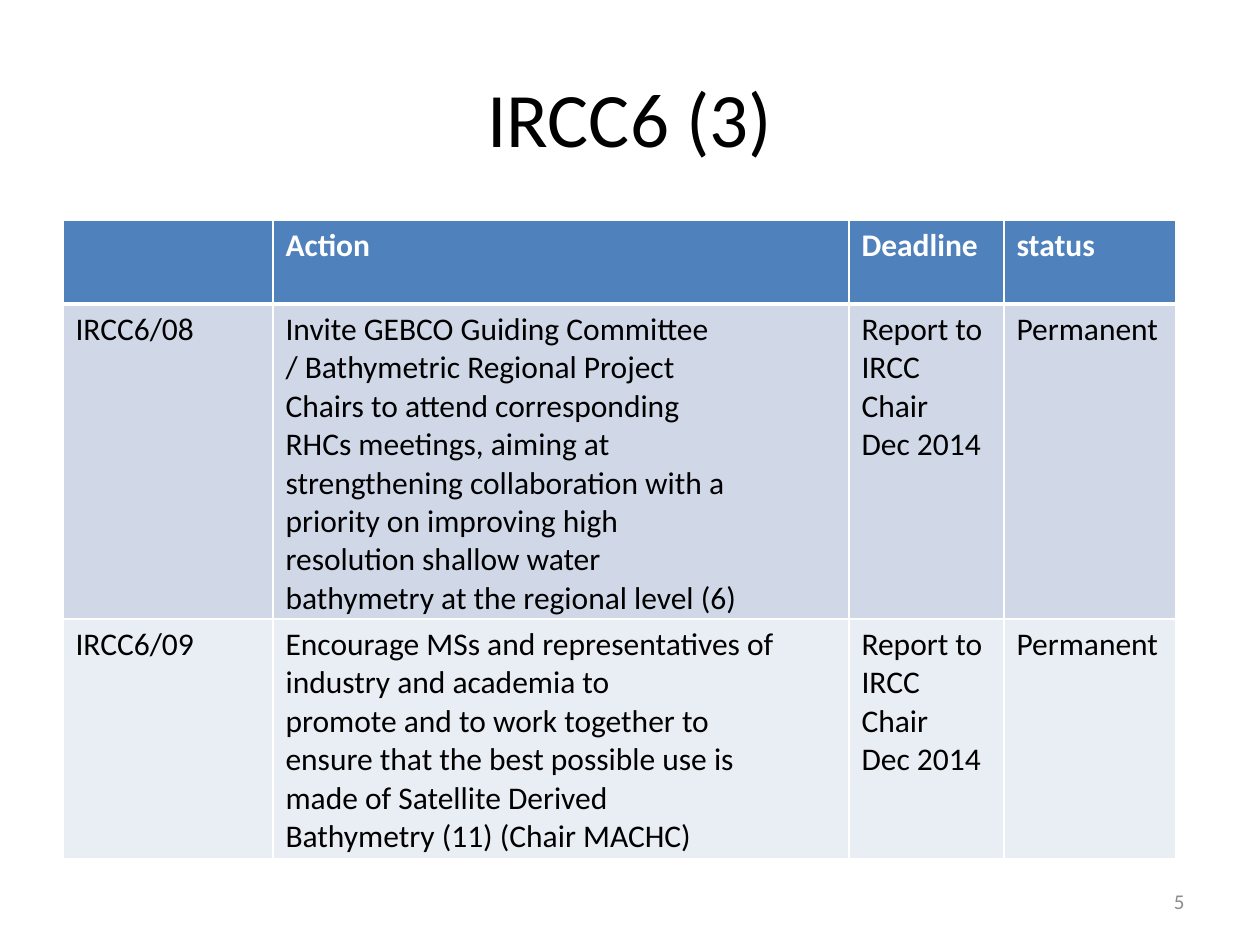
from dataclasses import dataclass

from lxml import etree
from pptx import Presentation
from pptx.dml.color import RGBColor
from pptx.enum.text import MSO_ANCHOR, PP_ALIGN
from pptx.oxml.ns import qn
from pptx.util import Emu, Pt

PX = 914400 // 126
MIDDLE = MSO_ANCHOR.MIDDLE
CENTER, LEFT, RIGHT = PP_ALIGN.CENTER, PP_ALIGN.LEFT, PP_ALIGN.RIGHT


@dataclass(frozen=True)
class Theme:
    font: str = "Calibri"
    title_size: int = 44
    table_size: int = 18
    number_size: int = 12
    black: str = "000000"
    white: str = "FFFFFF"
    grey: str = "8C8C8C"
    header_fill: str = "4F81BD"
    band_fills: tuple = ("D0D8E8", "E9EDF4")
    thin_border: int = 1
    thick_border: int = 3


THEME = Theme()

COLUMN_WIDTHS = (210, 576, 155, 172)
ROW_HEIGHTS = (84, 168, 168)
DEADLINE = "Report to\nIRCC Chair\nDec 2014"
ACTIONS = (
    ("", "Action", "Deadline", "status"),
    (
        "IRCC6/08",
        "Invite GEBCO Guiding Committee\n"
        "/ Bathymetric Regional Project\n"
        "Chairs to attend corresponding\n"
        "RHCs meetings, aiming at\n"
        "strengthening collaboration with a\n"
        "priority on improving high\n"
        "resolution shallow water\n"
        "bathymetry at the regional level (6)",
        DEADLINE,
        "Permanent",
    ),
    (
        "IRCC6/09",
        "Encourage MSs and representatives of industry and academia to\n"
        "promote and to work together to\n"
        "ensure that the best possible use is\n"
        "made of Satellite Derived\n"
        "Bathymetry (11) (Chair MACHC)",
        DEADLINE,
        "Permanent",
    ),
)


def px(length):
    return Emu(length * PX)


def write_text(text_frame, text, size, color, alignment=LEFT, bold=False):
    """Fill a text frame, one paragraph per line of text."""
    text_frame.text = text
    for paragraph in text_frame.paragraphs:
        paragraph.alignment = alignment
        paragraph.font.name = THEME.font
        paragraph.font.size = Pt(size)
        paragraph.font.bold = bold
        paragraph.font.color.rgb = RGBColor.from_string(color)


def add_label(slide, box, text, size, color, alignment):
    shape = slide.shapes.add_textbox(*map(px, box))
    shape.text_frame.word_wrap = True
    shape.text_frame.vertical_anchor = MIDDLE
    write_text(shape.text_frame, text, size, color, alignment)


def set_borders(cell, top, bottom):
    """Draw white borders; top and bottom are widths in points."""
    properties = cell._tc.get_or_add_tcPr()
    thin = THEME.thin_border
    for tag, width in (("lnL", thin), ("lnR", thin), ("lnT", top), ("lnB", bottom)):
        line = etree.SubElement(properties, qn(f"a:{tag}"), w=str(Pt(width)))
        fill = etree.SubElement(line, qn("a:solidFill"))
        etree.SubElement(fill, qn("a:srgbClr"), val=THEME.white)


def style_cell(cell, text, row_index):
    is_header = row_index == 0
    thin, thick = THEME.thin_border, THEME.thick_border
    set_borders(cell, thick if row_index == 1 else thin, thick if is_header else thin)
    band_fill = THEME.band_fills[(row_index - 1) % len(THEME.band_fills)]
    cell.fill.solid()
    cell.fill.fore_color.rgb = RGBColor.from_string(
        THEME.header_fill if is_header else band_fill
    )
    color = THEME.white if is_header else THEME.black
    write_text(cell.text_frame, text, THEME.table_size, color, bold=is_header)


def add_action_table(slide, box):
    shape = slide.shapes.add_table(len(ACTIONS), len(COLUMN_WIDTHS), *map(px, box))
    table = shape.table
    for column, width in zip(table.columns, COLUMN_WIDTHS):
        column.width = px(width)
    for row_index, (row, texts) in enumerate(zip(table.rows, ACTIONS)):
        row.height = px(ROW_HEIGHTS[row_index])
        for cell, text in zip(row.cells, texts):
            style_cell(cell, text, row_index)


def main():
    presentation = Presentation()
    presentation.slide_width, presentation.slide_height = px(1260), px(945)
    slide = presentation.slides.add_slide(presentation.slide_layouts[6])
    add_label(slide, (63, 38, 1134, 157), "IRCC6 (3)",
              THEME.title_size, THEME.black, CENTER)
    add_action_table(slide, (63, 220, sum(COLUMN_WIDTHS), 639))
    add_label(slide, (903, 876, 294, 50), "5",
              THEME.number_size, THEME.grey, RIGHT)
    presentation.save("out.pptx")


if __name__ == "__main__":
    main()
